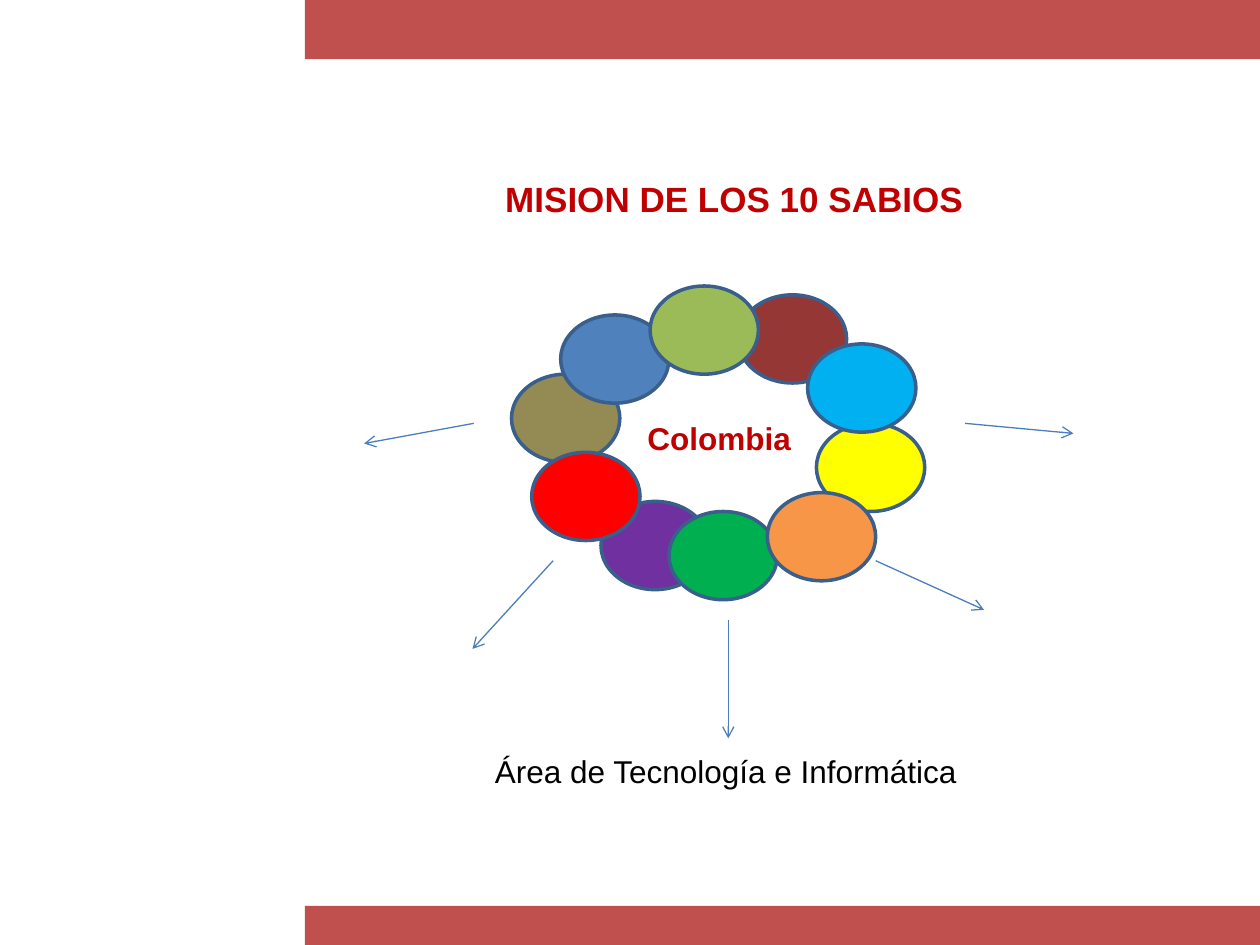
from typing import NamedTuple

from lxml import etree
from pptx import Presentation
from pptx import util as u
from pptx.dml.color import RGBColor
from pptx.enum import shapes, text
from pptx.oxml import ns


class Label(NamedTuple):
    words: str
    x: float
    y: float
    w: float
    h: float
    size: int
    color: str
    bold: bool


class Disc(NamedTuple):
    x: float
    y: float
    color: str


class Arrow(NamedTuple):
    x1: float
    y1: float
    x2: float
    y2: float


TITLE = Label("MISION DE LOS 10 SABIOS", 3.91, 1.36, 3.86, 0.44, 20, "C00000", True)
AREA = Label("Área de Tecnología e Informática", 3.83, 5.92, 3.89, 0.4, 18, "000000", False)
CENTER = Label("Colombia", 5.04, 3.28, 1.35, 0.4, 18, "C00000", True)

BANDS = [(0, 0.47), (7.19, 0.31)]
DISCS = [
    Disc(4.06, 2.97, "948A54"),
    Disc(4.45, 2.5, "4F81BD"),
    Disc(4.77, 3.98, "7030A0"),
    Disc(5.86, 2.34, "953735"),
    Disc(6.48, 3.36, "FFFF00"),
    Disc(5.16, 2.27, "9BBB59"),
    Disc(4.22, 3.59, "FF0000"),
    Disc(5.31, 4.06, "00B050"),
    Disc(6.41, 2.73, "00B0F0"),
    Disc(6.09, 3.91, "F79646"),
]
ARROWS = [
    Arrow(5.78, 4.92, 5.78, 5.86),
    Arrow(6.95, 4.45, 7.81, 4.84),
    Arrow(7.66, 3.36, 8.52, 3.44),
    Arrow(4.39, 4.45, 3.75, 5.15),
    Arrow(3.76, 3.36, 2.89, 3.52),
]


def paint(form, color: str) -> None:
    form.solid()
    form.fore_color.rgb = RGBColor.from_string(color)


def write(box, label: Label) -> None:
    box.left, box.top = u.Inches(label.x), u.Inches(label.y)
    box.width, box.height = u.Inches(label.w), u.Inches(label.h)
    frame = box.text_frame
    frame.text = label.words
    frame.word_wrap = False
    frame.auto_size = text.MSO_AUTO_SIZE.SHAPE_TO_FIT_TEXT
    frame.vertical_anchor = text.MSO_ANCHOR.TOP
    line = frame.paragraphs[0]
    line.alignment = text.PP_ALIGN.LEFT
    font = line.runs[0].font
    font.name = "Arial"
    font.size = u.Pt(label.size)
    font.bold = label.bold
    paint(font.fill, label.color)


def add_text(slide, label: Label) -> None:
    write(slide.shapes.add_textbox(0, 0, 0, 0), label)


def add_band(slide, top: float, high: float) -> None:
    band = slide.shapes.add_shape(
        shapes.MSO_SHAPE.RECTANGLE,
        u.Inches(2.42), u.Inches(top), u.Inches(7.58), u.Inches(high),
    )
    band.shadow.inherit = False
    paint(band.fill, "C0504D")
    band.line.fill.background()


def add_disc(ring, disc: Disc) -> None:
    oval = ring.shapes.add_shape(
        shapes.MSO_SHAPE.OVAL,
        u.Inches(disc.x), u.Inches(disc.y), u.Inches(0.86), u.Inches(0.7),
    )
    oval.shadow.inherit = False
    paint(oval.fill, disc.color)
    paint(oval.line.fill, "3A5F8C")
    oval.line.width = u.Pt(2)


def add_arrow(slide, arrow: Arrow) -> None:
    link = slide.shapes.add_connector(
        shapes.MSO_CONNECTOR.STRAIGHT, *(u.Inches(v) for v in arrow)
    )
    paint(link.line.fill, "4B7EBC")
    link.line.width = u.Pt(0.75)
    props = link.element.spPr
    tail = etree.SubElement(props.find(ns.qn("a:ln")), ns.qn("a:tailEnd"))
    tail.set("type", "arrow")
    etree.SubElement(props, ns.qn("a:effectLst"))


def main() -> None:
    deck = Presentation()
    deck.slide_width, deck.slide_height = u.Inches(10), u.Inches(7.5)
    slide = deck.slides.add_slide(deck.slide_layouts[5])
    paint(slide.background.fill, "FFFFFF")
    write(slide.shapes.title, TITLE)
    for top, high in BANDS:
        add_band(slide, top, high)
    add_text(slide, AREA)
    ring = slide.shapes.add_group_shape()
    for disc in DISCS:
        add_disc(ring, disc)
    add_text(slide, CENTER)
    for arrow in ARROWS:
        add_arrow(slide, arrow)
    deck.save("out.pptx")


if __name__ == "__main__":
    main()
